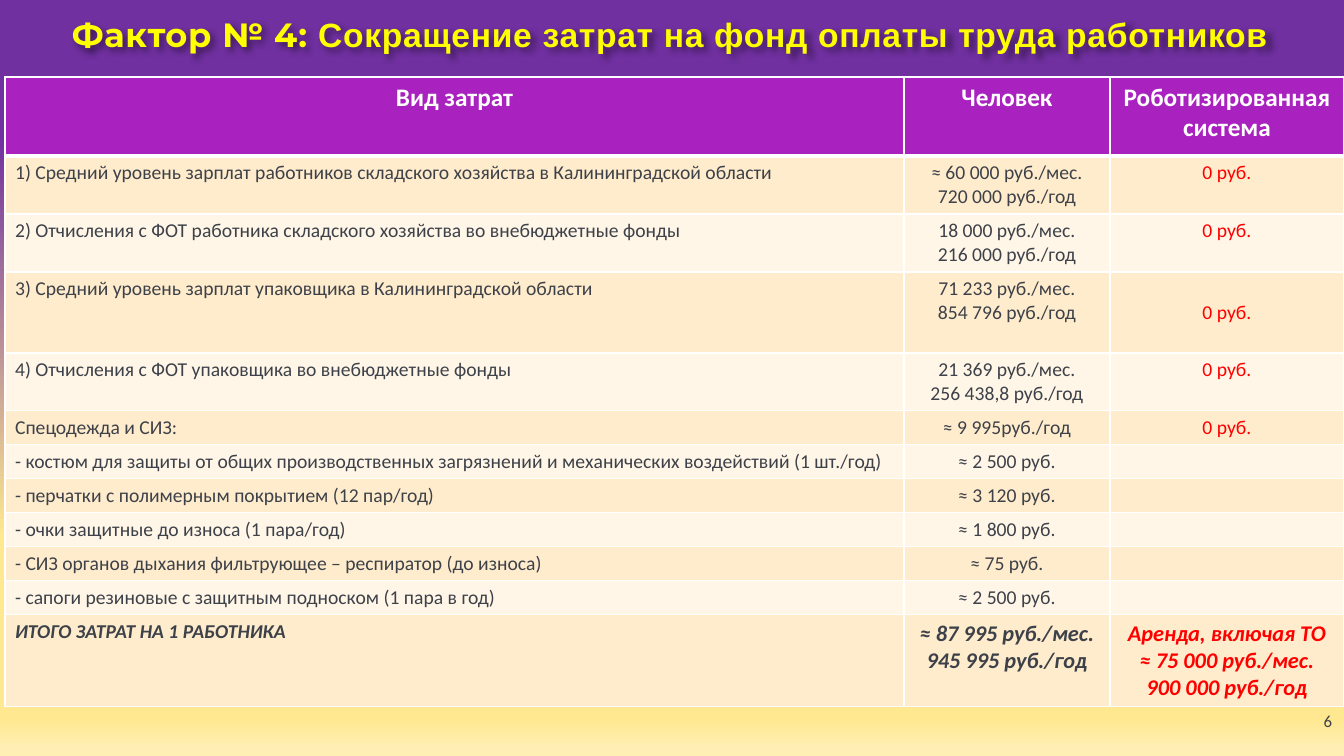
"""Build a slide comparing the labour cost of a worker and a robotic system."""
from dataclasses import dataclass

from lxml.etree import SubElement
from pptx import Presentation
from pptx.dml.color import RGBColor as Rgb
from pptx.enum.text import MSO_ANCHOR as Anchor, PP_ALIGN as Align
from pptx.oxml import parse_xml
from pptx.oxml.ns import qn
from pptx.util import Emu, Pt

TITLE = [("Фактор № 4: ", "Montserrat"),
         ("Сокращение затрат на фонд оплаты труда работников", "Arial")]
NUMBER = "6"
ZERO = "0 руб."
HEAD = ("Вид затрат", "Человек", "Роботизированная система")
COSTS = [
    ("1) Средний уровень зарплат работников складского хозяйства в Калининградской области",
     "≈ 60 000 руб./мес.\n720 000 руб./год", ZERO),
    ("2) Отчисления с ФОТ работника складского хозяйства во внебюджетные фонды",
     "18 000 руб./мес.\n216 000 руб./год", ZERO),
    ("3) Средний уровень зарплат упаковщика в Калининградской области",
     "71 233 руб./мес.\n854 796 руб./год", ZERO),
    ("4) Отчисления с ФОТ упаковщика во внебюджетные фонды",
     "21 369 руб./мес.\n256 438,8 руб./год", ZERO),
    ("Спецодежда и СИЗ:", "≈ 9 995руб./год", ZERO),
    ("- костюм для защиты от общих производственных загрязнений и механических воздействий (1 шт./год)",
     "≈ 2 500 руб.", ""),
    ("- перчатки с полимерным покрытием (12 пар/год)", "≈ 3 120 руб.", ""),
    ("- очки защитные до износа (1 пара/год)", "≈ 1 800 руб.", ""),
    ("- СИЗ органов дыхания фильтрующее – респиратор (до износа)", "≈ 75 руб.", ""),
    ("- сапоги резиновые с защитным подноском (1 пара в год)", "≈ 2 500 руб.", ""),
]
TOTAL = ("ИТОГО ЗАТРАТ НА 1 РАБОТНИКА",
         "≈ 87 995 руб./мес.\n945 995 руб./год",
         "Аренда, включая ТО\n≈ 75 000 руб./мес.\n900 000 руб./год")
ROWS = [HEAD, *COSTS, TOTAL]
WIDTHS = (899, 206, 234)
HEIGHTS = (79, 58, 58, 81, 58, *[34] * 6, 92)
LOWERED = (3, 2)


@dataclass(frozen=True)
class Theme:
    """Colours, fonts and type sizes of the slide."""
    font: str = "Calibri"
    ink: str = "3D4149"
    white: str = "FFFFFF"
    red: str = "FF0000"
    yellow: str = "FFFF00"
    head: str = "A922C0"
    bands: tuple = ("FFF6E7", "FFECCC")
    sky: tuple = ((18, "7030A0"), (71, "FFE88F"), (95, "FFE88F"), (99, "FFEFB4"))
    title: int = 24
    top: int = 18
    sum: int = 16
    body: int = 14
    small: int = 12


LOOK = Theme()
NS = 'xmlns:a="http://schemas.openxmlformats.org/drawingml/2006/main"'


def px(n):
    """Turn pixels into EMU."""
    return Emu(round(n * 914400 / 100.8))


def style(font, size, color, name=LOOK.font, bold=False, italic=False):
    """Set every property of a font."""
    font.name, font.size, font.bold, font.italic = name, Pt(size), bold, italic
    font.color.rgb = Rgb.from_string(color)


def place(shape, left, top, width, height):
    """Move and size a shape in pixels."""
    shape.left, shape.top, shape.width, shape.height = map(px, (left, top, width, height))


def paint(slide):
    """Fill the background with a vertical gradient."""
    slide.background.fill.gradient()
    grad = slide.background._cSld.find(".//" + qn("a:gradFill"))
    for child in list(grad):
        grad.remove(child)
    stops = SubElement(grad, qn("a:gsLst"))
    for pos, color in LOOK.sky:
        stop = SubElement(stops, qn("a:gs"), pos=str(pos * 1000))
        SubElement(stop, qn("a:srgbClr"), val=color)
    SubElement(grad, qn("a:lin"), ang="5400000", scaled="0")


def add_title(slide):
    """Write the title with its soft shadow."""
    title = slide.shapes.title
    place(title, 0, 13, 1340, 60)
    frame = title.text_frame
    frame.vertical_anchor = Anchor.TOP
    para = frame.paragraphs[0]
    para.alignment, para.line_spacing = Align.CENTER, 0.9
    for text, name in TITLE:
        run = para.add_run()
        run.text = text
        style(run.font, LOOK.title, LOOK.yellow, name, bold=True)
        run.font._element.set("spc", "50")
    title._element.spPr.append(parse_xml(
        f'<a:effectLst {NS}><a:outerShdw blurRad="38100" dist="38100" dir="2700000">'
        '<a:srgbClr val="000000"><a:alpha val="43000"/></a:srgbClr>'
        '</a:outerShdw></a:effectLst>'))


def edge(cell, row):
    """Draw white borders, thicker under the header."""
    thick = {(0, "B"), (1, "T")}
    props = cell._tc.get_or_add_tcPr()
    for i, side in enumerate("LRTB"):
        width = Pt(3 if (row, side) in thick else 1)
        props.insert(i, parse_xml(
            f'<a:ln{side} {NS} w="{width}"><a:solidFill>'
            f'<a:srgbClr val="{LOOK.white}"/></a:solidFill></a:ln{side}>'))


def fill_cell(cell, row, col, text):
    """Write and format one cell."""
    head, total = row == 0, row == len(ROWS) - 1
    cell.fill.solid()
    cell.fill.fore_color.rgb = Rgb.from_string(LOOK.head if head else LOOK.bands[row % 2])
    edge(cell, row)
    if (row, col) == LOWERED:
        cell.margin_top = px(29)
    size = LOOK.top if head else LOOK.sum if total and col else LOOK.body
    color = LOOK.white if head else LOOK.red if col == 2 else LOOK.ink
    cell.text_frame.text = text
    for para in cell.text_frame.paragraphs:
        para.alignment = Align.CENTER if head or col else Align.LEFT
        style(para.font, size, color, bold=head or total, italic=total)


def add_costs(slide):
    """Add the table of costs."""
    table = slide.shapes.add_table(
        len(ROWS), len(WIDTHS), px(5), px(77), px(sum(WIDTHS)), px(sum(HEIGHTS))).table
    for column, width in zip(table.columns, WIDTHS):
        column.width = px(width)
    for r, (texts, height) in enumerate(zip(ROWS, HEIGHTS)):
        table.rows[r].height = px(height)
        for c, text in enumerate(texts):
            fill_cell(table.cell(r, c), r, c, text)


def add_number(slide):
    """Write the slide number in the corner."""
    box = slide.shapes.add_textbox(px(1039), px(701), px(303), px(40))
    frame = box.text_frame
    frame.word_wrap, frame.vertical_anchor = True, Anchor.MIDDLE
    para = frame.paragraphs[0]
    para.text, para.alignment = NUMBER, Align.RIGHT
    style(para.font, LOOK.small, LOOK.ink)


def main():
    """Build and save the slide."""
    deck = Presentation()
    deck.slide_width, deck.slide_height = px(1344), px(756)
    slide = deck.slides.add_slide(deck.slide_layouts[5])
    paint(slide)
    add_number(slide)
    add_title(slide)
    add_costs(slide)
    deck.save("out.pptx")


if __name__ == "__main__":
    main()
